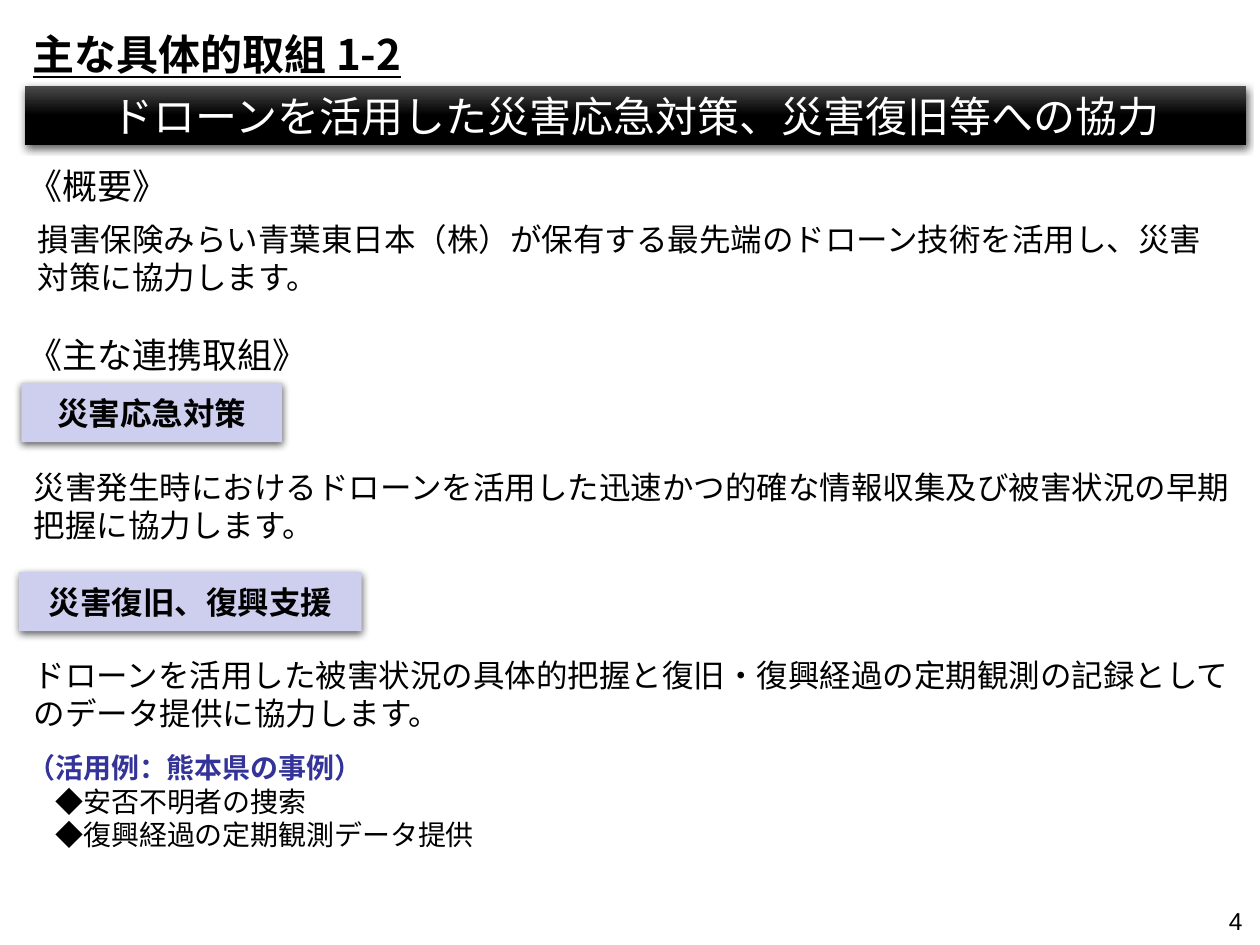
import pptx
import pptx.dml.color
import pptx.enum.shapes
import pptx.enum.text
import pptx.oxml
import pptx.oxml.ns
import pptx.util
from lxml import etree

BLACK = pptx.dml.color.RGBColor(0x00, 0x00, 0x00)
WHITE = pptx.dml.color.RGBColor(0xFF, 0xFF, 0xFF)
CHARCOAL = pptx.dml.color.RGBColor(0x4B, 0x4B, 0x4B)
LAVENDER = pptx.dml.color.RGBColor(0xCE, 0xCE, 0xEF)
INDIGO = pptx.dml.color.RGBColor(0x33, 0x33, 0x99)
JAPANESE = "Noto Sans CJK JP"
TOP = pptx.enum.text.MSO_ANCHOR.TOP
MIDDLE = pptx.enum.text.MSO_ANCHOR.MIDDLE
CENTER = pptx.enum.text.PP_ALIGN.CENTER
SHADOW = (
    '<a:effectLst xmlns:a="http://schemas.openxmlformats.org/drawingml/2006/main">'
    '<a:outerShdw blurRad="57150" dist="19050" dir="5400000" algn="ctr" rotWithShape="0">'
    '<a:srgbClr val="000000"><a:alpha val="63000"/></a:srgbClr>'
    "</a:outerShdw></a:effectLst>"
)

deck = pptx.Presentation()
deck.slide_width = pptx.util.Inches(10)
deck.slide_height = pptx.util.Inches(7.5)
page = deck.slides.add_slide(deck.slide_layouts[6])

# The page is a grid of 100 columns by 75 rows.
column = deck.slide_width / 100
row = deck.slide_height / 75


def place(left, top, width, height):
    """Turn grid columns and rows into slide lengths."""
    return round(left * column), round(top * row), round(width * column), round(height * row)


def style(para, size, color=BLACK, bold=False, face=JAPANESE):
    """Set the font of a whole paragraph, for Latin and East Asian text alike."""
    para.font.size = pptx.util.Pt(size)
    para.font.bold = bold
    para.font.color.rgb = color
    para.font.name = face
    east_asian = etree.SubElement(para.font._element, pptx.oxml.ns.qn("a:ea"))
    east_asian.set("typeface", face)


# Banner and section labels: shadowed rectangles
banner_text = "ドローンを活用した災害応急対策、災害復旧等への協力"
panels = [
    (banner_text, (2, 6.8, 96.9, 4.7), 24, WHITE, False),
    ("災害応急対策", (1.7, 30.4, 20.7, 4.7), 18, BLACK, True),
    ("災害復旧、復興支援", (1.5, 45.4, 27.2, 4.7), 18, BLACK, True),
]
for text, area, size, color, bold in panels:
    panel = page.shapes.add_shape(pptx.enum.shapes.MSO_SHAPE.RECTANGLE, *place(*area))
    if text == banner_text:
        panel.fill.gradient()
        panel.fill.gradient_angle = 270
        start, end = panel.fill.gradient_stops
        start.position, start.color.rgb = 0, CHARCOAL
        end.position, end.color.rgb = 0.5, BLACK
    else:
        panel.fill.solid()
        panel.fill.fore_color.rgb = LAVENDER
    panel.line.fill.background()
    panel._element.spPr.append(pptx.oxml.parse_xml(SHADOW))
    panel.text_frame.word_wrap = False
    panel.text_frame.vertical_anchor = MIDDLE
    para = panel.text_frame.paragraphs[0]
    para.text = text
    para.alignment = CENTER
    style(para, size, color, bold)

# Headings and body text
passages = [
    ("《概要》", (1.2, 12.6, 15.7, 4.4), 20, TOP),
    ("損害保険みらい青葉東日本（株）が保有する最先端のドローン技術を活用し、災害対策に協力します。",
     (2, 17, 96.6, 7.1), 18, TOP),
    ("《主な連携取組》", (1.2, 26, 28.7, 4.4), 20, TOP),
    ("災害発生時におけるドローンを活用した迅速かつ的確な情報収集及び被害状況の早期把握に協力します。",
     (1.7, 36.5, 96.9, 7.3), 18, MIDDLE),
    ("ドローンを活用した被害状況の具体的把握と復旧・復興経過の定期観測の記録としてのデータ提供に協力します。",
     (1.7, 51.3, 96.9, 7.5), 18, MIDDLE),
]
for text, area, size, anchor in passages:
    box = page.shapes.add_textbox(*place(*area))
    box.text_frame.word_wrap = True
    box.text_frame.vertical_anchor = anchor
    para = box.text_frame.paragraphs[0]
    para.text = text
    style(para, size)

# Page title
title = page.shapes.add_textbox(*place(1.6, 1.8, 60.2, 5))
title.text_frame.word_wrap = True
para = title.text_frame.paragraphs[0]
para.text = "主な具体的取組 1-2"
style(para, 24, bold=True)
para.font.underline = True

# Case example, with its items indented by one character
example = page.shapes.add_textbox(*place(1.2, 59.1, 52, 9.1))
example.text_frame.word_wrap = True
example.text_frame.text = "（活用例：熊本県の事例）\n◆安否不明者の捜索\n◆復興経過の定期観測データ提供"
heading, *items = example.text_frame.paragraphs
style(heading, 16, INDIGO, bold=True)
for item in items:
    style(item, 16)
    item._p.get_or_add_pPr().set("marL", str(pptx.util.Pt(16)))

# Page number
number = page.shapes.add_textbox(*place(76.3, 71.4, 23.3, 3.6))
number.text_frame.word_wrap = True
para = number.text_frame.paragraphs[0]
para.text = "4"
para.alignment = pptx.enum.text.PP_ALIGN.RIGHT
style(para, 14, face="Arial")

deck.save("out.pptx")
